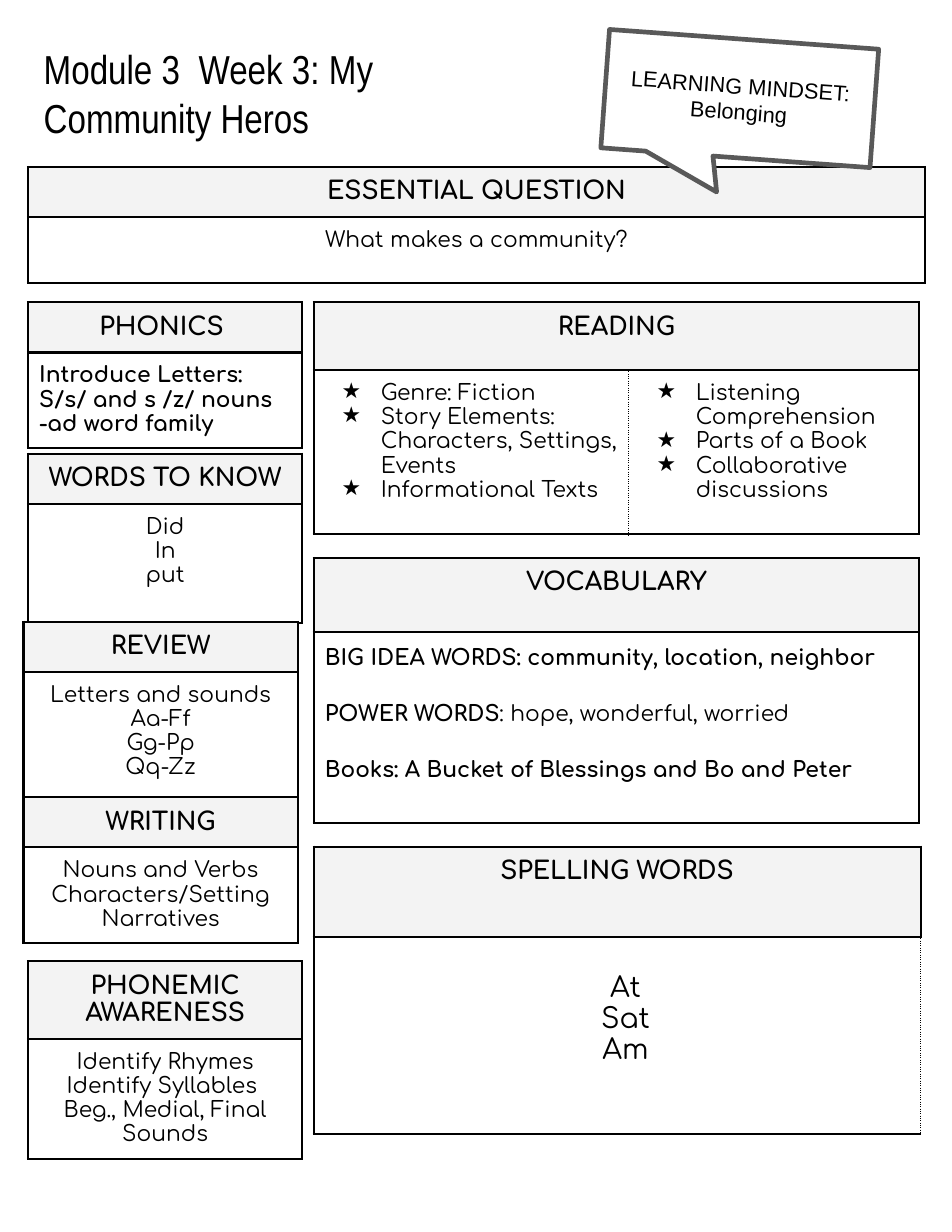
from lxml import etree
from pptx import Presentation, util as u
from pptx.dml.color import RGBColor
from pptx.enum import shapes, text
from pptx.oxml.ns import qn

Pt = u.Pt
HEX = {"ink": "000000", "head": "F3F3F3", "paper": "FFFFFF", "edge": "595959"}
FONT = "Comfortaa"
MID, LEFT = text.PP_ALIGN.CENTER, text.PP_ALIGN.LEFT
PAD = 7.2

TITLE = "Module 3  Week 3: My Community Heros "
MIND = "LEARNING MINDSET: Belonging"

# heading, (left, top), column widths, (head, body) heights, body cells, format
# A bar in a bold line marks where its regular part starts.
BOXES = [
    ("PHONICS ", (18, 194.4), [176.4], (32, 61),
     [["Introduce Letters:", "S/s/ and s /z/ nouns", "-ad word family"]],
     {"bold": True, "align": LEFT}),
    ("ESSENTIAL QUESTION", (18, 107.3), [576.7], (32, 42.5),
     [["What makes a community?"]], {}),
    ("WORDS TO KNOW", (18, 291.6), [176.4], (32, 76.5),
     [["Did", "In", "put"]], {}),
    ("VOCABULARY", (201.6, 358.6), [389.5], (47.5, 123),
     [["BIG IDEA WORDS: community, location, neighbor",
       "POWER WORDS|: hope, wonderful, worried",
       "Books: A Bucket of Blessings and Bo and Peter"]],
     {"bold": True, "align": LEFT, "line": 1.15, "gap": 18}),
    ("READING", (201.6, 194.4), [202.5, 187], (43.5, 105.5),
     [["Genre: Fiction", "Story Elements: Characters, Settings, Events",
       "Informational Texts"],
      ["Listening Comprehension", "Parts of a Book",
       "Collaborative discussions"]],
     {"align": LEFT, "star": True, "dots": [(0, "R"), (1, "L")]}),
    ("REVIEW", (15.1, 399.6), [176.4], (32, 81),
     [["Letters and sounds", "Aa-Ff", "Gg-Pp", "Qq-Zz"]], {}),
    ("WRITING", (15.1, 512.6), [176.4], (32, 61),
     [["Nouns and Verbs", "Characters/Setting", "Narratives"]], {}),
    ("PHONEMIC AWARENESS", (18, 617.8), [176.4], (49.5, 77),
     [["Identify Rhymes", "Identify Syllables ",
       "Beg., Medial, Final Sounds"]], {}),
    ("SPELLING WORDS", (201.6, 544.3), [390.2], (58, 127),
     [["At", "Sat", "Am"]],
     {"size": 18, "top": 23, "left": 18, "dots": [(0, "R")]}),
]


def rgb(name):
    return RGBColor.from_string(HEX[name])


def put(obj, vals):
    for key, val in vals.items():
        setattr(obj, key, val)


def style(font, size, name=FONT, bold=False):
    put(font, {"size": Pt(size), "name": name, "bold": bold})
    font.color.rgb = rgb("ink")


def pad(obj, left=PAD, top=PAD):
    put(obj, {"margin_left": Pt(left), "margin_top": Pt(top),
              "margin_right": Pt(PAD), "margin_bottom": Pt(PAD)})


def rule(cell, dots=()):
    """Draw the four cell borders; sides named in dots are thin and dotted."""
    prop = cell._tc.get_or_add_tcPr()
    for side in "LRTB":
        dot = side in dots
        line = etree.SubElement(prop, qn("a:ln" + side),
                                w=str(Pt(0.75 if dot else 1.5)))
        fill = etree.SubElement(line, qn("a:solidFill"))
        etree.SubElement(fill, qn("a:srgbClr"), val=HEX["ink"])
        etree.SubElement(line, qn("a:prstDash"), val="dot" if dot else "solid")


def star(para):
    prop = para._p.get_or_add_pPr()
    put_in = {"marL": Pt(36), "indent": Pt(-25.2)}
    for key, val in put_in.items():
        prop.set(key, str(val))
    tint = etree.SubElement(prop, qn("a:buClr"))
    etree.SubElement(tint, qn("a:srgbClr"), val=HEX["ink"])
    etree.SubElement(prop, qn("a:buChar"), char="★")


def write(cell, lines, fmt):
    frame = cell.text_frame
    for i, line in enumerate(lines):
        para = frame.add_paragraph() if i else frame.paragraphs[0]
        put(para, {"alignment": fmt.get("align", MID),
                   "line_spacing": fmt.get("line", 1.0)})
        if i and "gap" in fmt:
            para.space_before = Pt(fmt["gap"])
        if "star" in fmt:
            star(para)
        for j, part in enumerate(line.split("|")):
            run = para.add_run()
            run.text = part
            style(run.font, fmt.get("size", 14),
                  bold=fmt.get("bold", False) and j == 0)


def add_box(slide, head, spot, wide, high, body, fmt):
    area = [Pt(n) for n in (*spot, sum(wide), sum(high))]
    table = slide.shapes.add_table(2, len(wide), *area).table
    put(table, {"first_row": False, "horz_banding": False})
    for row, size in zip(table.rows, high):
        row.height = Pt(size)
    for i, size in enumerate(wide):
        table.columns[i].width = Pt(size)
        top, low = table.cell(0, i), table.cell(1, i)
        rule(top)
        rule(low, [side for col, side in fmt.get("dots", []) if col == i])
        top.fill.solid()
        top.fill.fore_color.rgb = rgb("head")
        low.fill.background()
        pad(top)
        pad(low, fmt.get("left", PAD), fmt.get("top", PAD))
        write(low, body[i], fmt)
    first = table.cell(0, 0)
    if len(wide) > 1:
        first.merge(table.cell(0, len(wide) - 1))
    write(first, [head], {"size": 16, "bold": True})


def add_title(slide):
    title = slide.shapes.title
    put(title, {"left": Pt(20.9), "top": Pt(45.4),
                "width": Pt(308.9), "height": Pt(52.6)})
    frame = title.text_frame
    put(frame, {"text": TITLE, "word_wrap": True,
                "auto_size": text.MSO_AUTO_SIZE.NONE,
                "vertical_anchor": text.MSO_ANCHOR.BOTTOM})
    pad(frame)
    para = frame.paragraphs[0]
    para.alignment = LEFT
    style(para.runs[0].font, 26, "Arial Narrow")


def add_mind(slide):
    kind = shapes.MSO_SHAPE.ROUNDED_RECTANGULAR_CALLOUT
    note = slide.shapes.add_shape(kind, Pt(388.8), Pt(25.2), Pt(173.5), Pt(76.3))
    note.rotation = 4.2
    for i, val in enumerate((-0.06, 0.8, 0)):
        note.adjustments[i] = val
    note.shadow.inherit = False
    note.fill.solid()
    note.fill.fore_color.rgb = rgb("paper")
    note.line.color.rgb = rgb("edge")
    note.line.width = Pt(3)
    frame = note.text_frame
    put(frame, {"text": MIND, "word_wrap": True,
                "vertical_anchor": text.MSO_ANCHOR.MIDDLE})
    pad(frame)
    para = frame.paragraphs[0]
    para.alignment = MID
    style(para.runs[0].font, 14, "Arial")


def main():
    deck = Presentation()
    put(deck, {"slide_width": Pt(612), "slide_height": Pt(792)})
    slide = deck.slides.add_slide(deck.slide_layouts[5])
    add_title(slide)
    for box in BOXES:
        add_box(slide, *box)
    add_mind(slide)
    deck.save("out.pptx")


if __name__ == "__main__":
    main()
